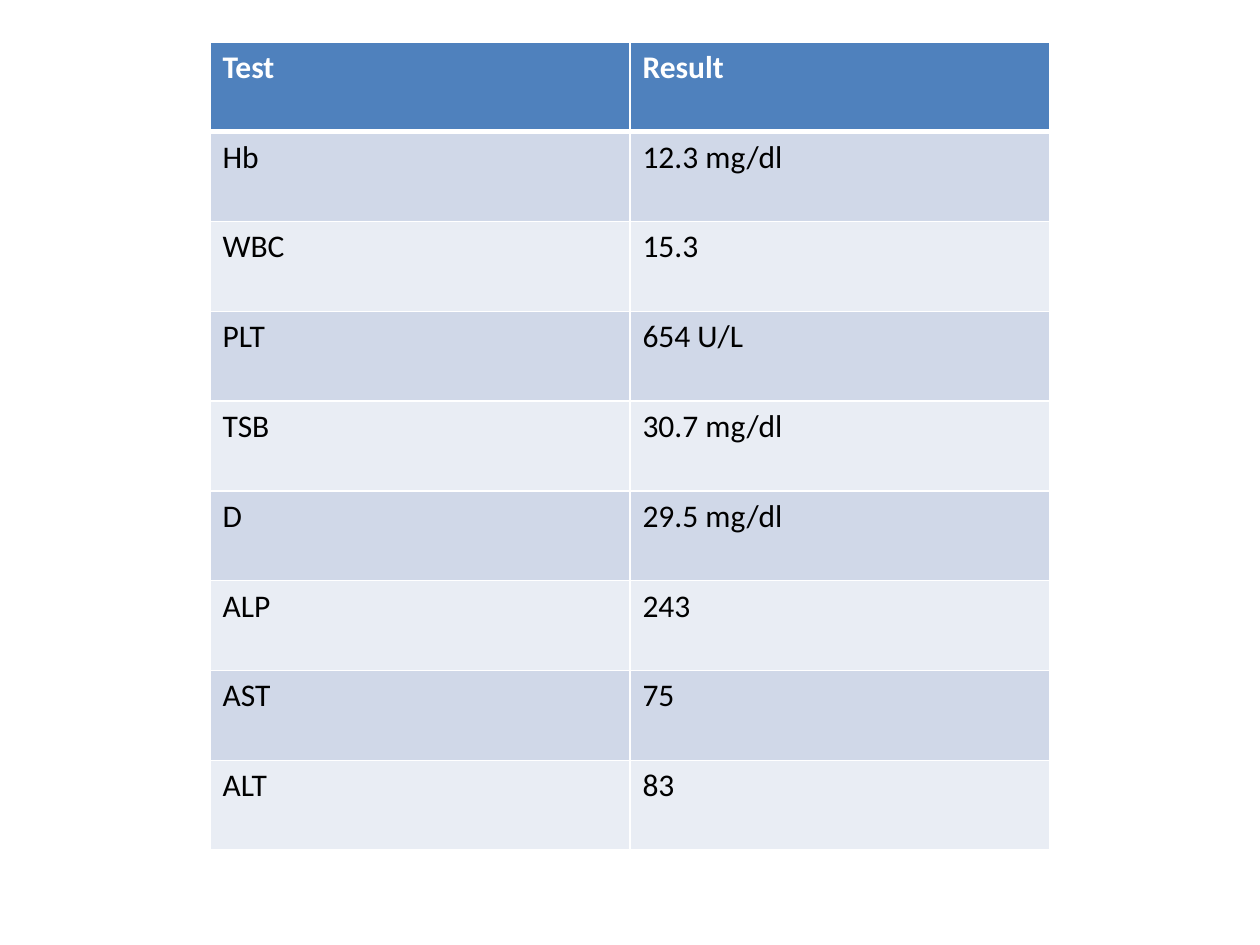
from lxml.etree import SubElement
from pptx import Presentation
from pptx.dml.color import RGBColor
from pptx.oxml.ns import qn
from pptx.util import Inches, Pt

COLORS = {
    "header": "4F81BD",
    "odd": "D0D8E8",
    "even": "E9EDF4",
    "border": "FFFFFF",
    "header_text": "FFFFFF",
    "body_text": "000000",
}
RESULTS = [
    ("Test", "Result"),
    ("Hb", "12.3 mg/dl"),
    ("WBC", "15.3"),
    ("PLT", "654 U/L"),
    ("TSB", "30.7 mg/dl"),
    ("D", "29.5 mg/dl"),
    ("ALP", "243"),
    ("AST", "75"),
    ("ALT", "83"),
]


def set_borders(cell, widths):
    tc_pr = cell._tc.get_or_add_tcPr()
    for side, width in widths.items():
        ln = SubElement(tc_pr, qn(f"a:ln{side}"), w=str(Pt(width)))
        fill = SubElement(ln, qn("a:solidFill"))
        SubElement(fill, qn("a:srgbClr"), val=COLORS["border"])


def style_cell(cell, text, row):
    header = row == 0
    set_borders(cell, {"L": 1, "R": 1, "T": 3 if row == 1 else 1, "B": 3 if header else 1})
    band = "header" if header else "odd" if row % 2 else "even"
    cell.fill.solid()
    cell.fill.fore_color.rgb = RGBColor.from_string(COLORS[band])
    cell.text_frame.text = text
    font = cell.text_frame.paragraphs[0].runs[0].font
    font.name = "Calibri"
    font.size = Pt(18)
    font.bold = header
    font.color.rgb = RGBColor.from_string(COLORS["header_text" if header else "body_text"])


def add_results_table(slide, left, top, width, height):
    rows, cols = len(RESULTS), len(RESULTS[0])
    table = slide.shapes.add_table(rows, cols, left, top, width, height).table
    for r, values in enumerate(RESULTS):
        for c, text in enumerate(values):
            style_cell(table.cell(r, c), text, r)


def main():
    prs = Presentation()
    prs.slide_width, prs.slide_height = Inches(10), Inches(7.5)
    slide = prs.slides.add_slide(prs.slide_layouts[6])
    col, row = prs.slide_width / 6, prs.slide_height / 90
    add_results_table(slide, int(col), int(4 * row), int(4 * col), int(77 * row))
    prs.save("out.pptx")


if __name__ == "__main__":
    main()
